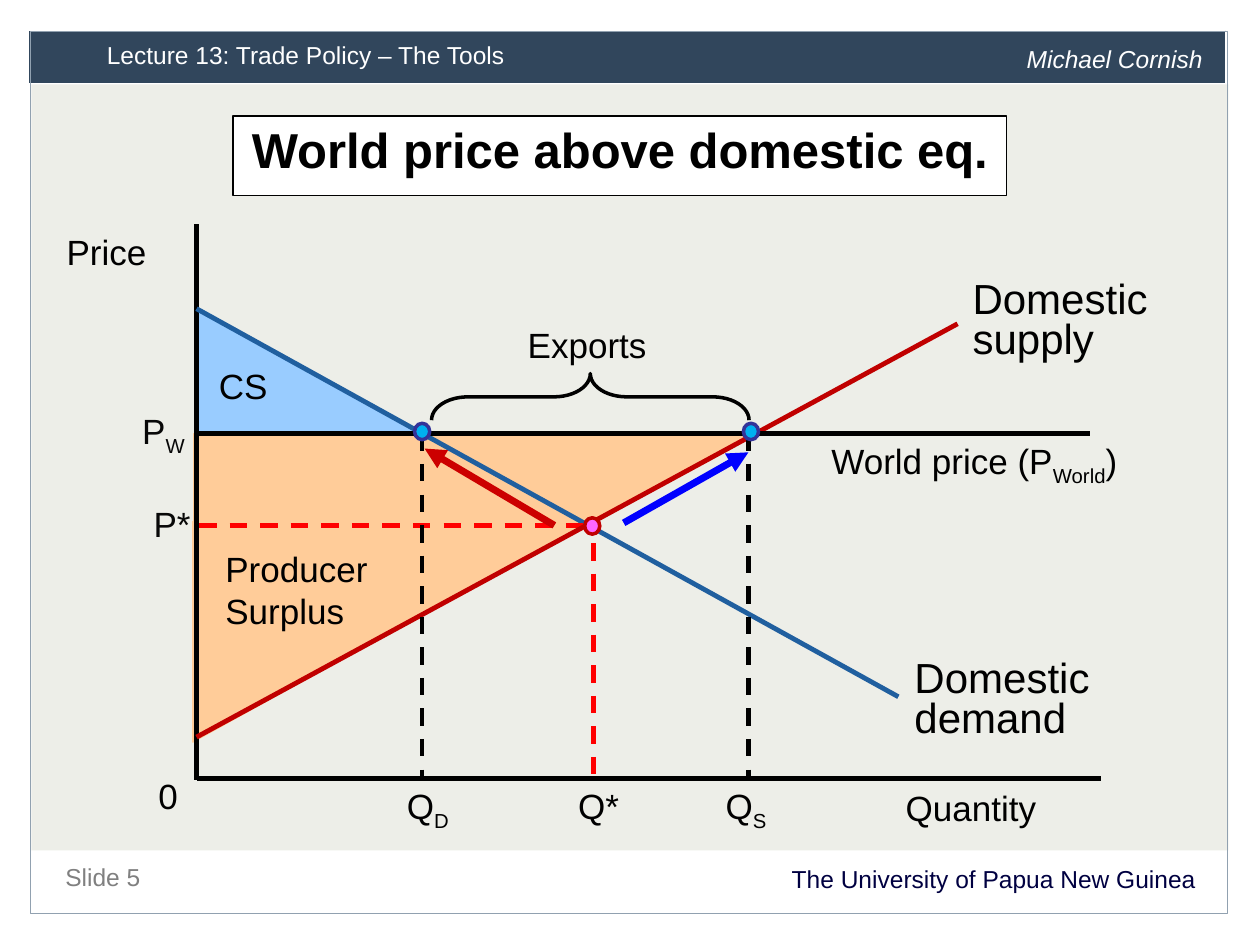
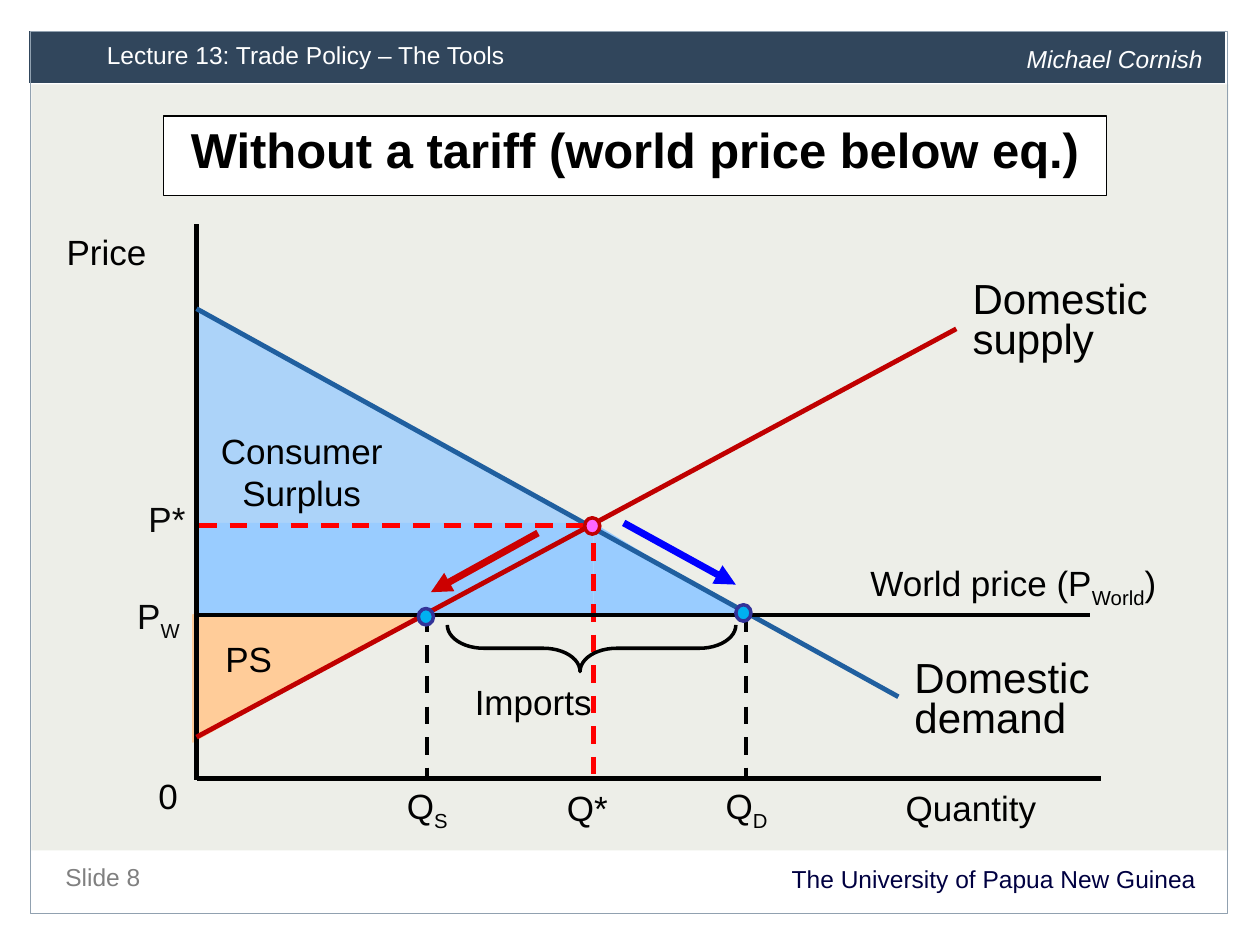
from lxml import etree
from pptx import Presentation
from pptx.dml.color import RGBColor
from pptx.enum.dml import MSO_LINE
from pptx.enum.shapes import MSO_CONNECTOR, MSO_SHAPE
from pptx.enum.text import MSO_ANCHOR, MSO_AUTO_SIZE, PP_ALIGN
from pptx.oxml.ns import qn
from pptx.util import Pt

PX = 9144  # EMU in one px, 100 px to the inch
FONT = "Arial"
TITLE_ONLY = 5

RECT, OVAL = MSO_SHAPE.RECTANGLE, MSO_SHAPE.OVAL
WEDGE, BRACE = MSO_SHAPE.RIGHT_TRIANGLE, MSO_SHAPE.LEFT_BRACE
STRAIGHT, DASH = MSO_CONNECTOR.STRAIGHT, MSO_LINE.DASH
LEFT, CENTER, RIGHT = PP_ALIGN.LEFT, PP_ALIGN.CENTER, PP_ALIGN.RIGHT
MIDDLE, NO_FIT = MSO_ANCHOR.MIDDLE, MSO_AUTO_SIZE.NONE

BLACK = RGBColor(0x00, 0x00, 0x00)
INK = RGBColor(0x08, 0x08, 0x08)
WHITE = RGBColor(0xFF, 0xFF, 0xFF)
GREY = RGBColor(0x80, 0x80, 0x80)
PANEL = RGBColor(0xED, 0xEE, 0xE8)
BAND = RGBColor(0x31, 0x46, 0x5C)
FRAME = RGBColor(0x91, 0xA1, 0xB0)
NAVY = RGBColor(0x00, 0x00, 0x41)
PEACH = RGBColor(0xFF, 0xCC, 0x99)
SKY = RGBColor(0x99, 0xCC, 0xFF)
DEMAND = RGBColor(0x20, 0x5F, 0x9F)
SUPPLY = RGBColor(0xC0, 0x00, 0x00)
RED = RGBColor(0xFF, 0x00, 0x00)
BLUE = RGBColor(0x00, 0x00, 0xFF)
CRIMSON = RGBColor(0xCC, 0x00, 0x00)
PINK = RGBColor(0xFF, 0x66, 0xFF)
CYAN = RGBColor(0x00, 0xB0, 0xF0)
INDIGO = RGBColor(0x33, 0x33, 0x99)

# Chart places shared by both slides
AXIS_X, AXIS_Y = 156, 618
STAR_X, STAR_Y = 471, 417


def scale(*sizes):
    return [size * PX for size in sizes]


class Pen:
    def __init__(self):
        self.deck = Presentation()
        self.deck.slide_width, self.deck.slide_height = scale(1000, 750)
        self.slide = None

    def start(self, number):
        """Add a slide with the bands, frame and footers."""
        layout = self.deck.slide_layouts[TITLE_ONLY]
        self.slide = self.deck.slides.add_slide(layout)
        self.shape(RECT, 25, 67, 950, 608, PANEL)
        self.shape(RECT, 23, 24, 950, 42, BAND, WHITE, 0.5)
        self.text("The University of Papua New Guinea", 42, 683, 917, 32,
                  14, NAVY, RIGHT, Pt(15))
        self.text(f"Slide {number}", 42, 675, 433, 34, 14, GREY,
                  space=Pt(20))
        self.text("Lecture 13: Trade Policy – The Tools", 75, 25, 613, 37,
                  14, WHITE, space=Pt(18))
        self.shape(RECT, 24, 25, 950, 700, line=FRAME)
        self.text("Michael Cornish", 805, 28, 164, 37, 14, WHITE,
                  space=Pt(18), italic=True)

    def title(self, text, x, width):
        box = self.slide.shapes.title
        box.left, box.top, box.width, box.height = scale(x, 92, width, 63)
        box.fill.solid()
        box.fill.fore_color.rgb = WHITE
        box.line.color.rgb = BLACK
        box.line.width = Pt(0.75)
        frame = box.text_frame
        frame.text = text
        frame.auto_size = NO_FIT
        frame.vertical_anchor = MIDDLE
        para = frame.paragraphs[0]
        self.style(para, 28, BLACK, CENTER, Pt(26))
        para.font.bold = True
        # Bring the title in front of the background panel
        self.slide.shapes._spTree.append(box._element)

    def style(self, para, size, color, align, space):
        para.alignment = align
        if space:
            para.line_spacing = space
        para.font.name = FONT
        para.font.size = Pt(size)
        para.font.color.rgb = color

    def text(self, words, x, y, width, height, size=20, color=BLACK,
             align=LEFT, space=None, italic=False):
        """Add text; every second part between underscores is a subscript."""
        box = self.slide.shapes.add_textbox(*scale(x, y, width, height))
        box.text_frame.word_wrap = True
        para = box.text_frame.paragraphs[0]
        for index, part in enumerate(words.split("_")):
            if part:
                run = para.add_run()
                run.text = part
                if index % 2:
                    run._r.get_or_add_rPr().set("baseline", "-25000")
        self.style(para, size, color, align, space)
        if italic:
            para.font.italic = True

    def shape(self, kind, x, y, width, height, fill=None, line=None,
              weight=0.75):
        item = self.slide.shapes.add_shape(kind, *scale(x, y, width, height))
        item.shadow.inherit = False
        if fill is None:
            item.fill.background()
        else:
            item.fill.solid()
            item.fill.fore_color.rgb = fill
        if line is None:
            item.line.fill.background()
        else:
            item.line.color.rgb = line
            item.line.width = Pt(weight)
        return item

    def wedge(self, x, y, width, height, fill, line=None, flip=False,
              alpha=None):
        item = self.shape(WEDGE, x, y, width, height, fill, line)
        if flip:
            item._element.spPr.find(qn("a:xfrm")).set("flipV", "1")
        if alpha:
            tint = item._element.spPr.find(qn("a:solidFill"))[0]
            etree.SubElement(tint, qn("a:alpha")).set("val", str(alpha * 1000))

    def dot(self, x, y, fill=CYAN, line=INDIGO):
        self.shape(OVAL, x, y, 12, 13, fill, line, 2)

    def brace(self, x, y, length, turn, tip):
        item = self.shape(BRACE, x, y, 37, length, line=BLACK, weight=2)
        item.rotation = turn
        item.adjustments[0] = 0.78
        item.adjustments[1] = tip

    def line(self, start, end, color=BLACK, weight=2.5, dash=False,
             arrow=False):
        item = self.slide.shapes.add_connector(
            STRAIGHT, *scale(*start, *end))
        item.line.color.rgb = color
        item.line.width = Pt(weight)
        if dash:
            item.line.dash_style = DASH
        if arrow:
            tail = etree.SubElement(item.line._get_or_add_ln(),
                                    qn("a:tailEnd"))
            tail.set("type", "triangle")
        etree.SubElement(item._element.spPr, qn("a:effectLst"))

    def market(self, supply_end):
        """Draw the axes, both curves and the domestic equilibrium."""
        self.line((AXIS_X, 178), (AXIS_X, AXIS_Y + 1))
        self.line((AXIS_X, AXIS_Y), (874, AXIS_Y))
        self.text("Price", 43, 178, 177, 49)
        self.text("Quantity", 709, 626, 160, 42, space=0.8)
        self.text("0", 116, 610, 40, 45)
        self.line((AXIS_X, 245), (713, 553), DEMAND, 2.75)
        self.text("Domestic demand", 716, 520, 187, 84, 24, space=0.8)
        self.line((158, STAR_Y), (472, STAR_Y), RED, dash=True)
        self.line((STAR_X, 431), (STAR_X, AXIS_Y), RED, dash=True)
        self.line((AXIS_X, 585), supply_end, SUPPLY, 2.75)
        self.text("Domestic supply", 762, 219, 178, 84, 24, space=0.8)

    def trade(self, price, left, right, names):
        """Draw the world price line and the two traded quantities."""
        self.line((AXIS_X, price), (865, price))
        self.dot(464, 411, PINK, SUPPLY)
        for x in (left, right):
            self.line((x, price), (x, AXIS_Y), dash=True)
        for x, name in zip((313, 566), names):
            self.text(f"Q_{name}_", x, 618, 62, 46)

    def shift(self, *arrows):
        for color, (start, end) in zip((BLUE, CRIMSON), arrows):
            self.line(start, end, color, 4, arrow=True)


def exports(pen):
    price = 344
    pen.start(5)
    pen.shape(RECT, 154, price, 312, 71, PEACH, PEACH)
    pen.wedge(467, price, 135, 71, PEACH, PEACH, flip=True)
    pen.wedge(153, 414, 315, 175, PEACH, PEACH, flip=True)
    pen.wedge(AXIS_X, 245, 179, 99, SKY)
    pen.market((760, 257))
    pen.trade(price, 335, 594, "DS")
    pen.text("Q*", 449, 618, 58, 49)
    pen.text("P*", 112, 394, 81, 49, color=INK)
    pen.text("P_W_", 103, 320, 65, 49, color=INK)
    pen.text("World price (P_World_)", 650, price, 283, 49)
    pen.brace(450, 189, 252, 90, 0.5)
    pen.text("Exports", 409, 252, 126, 44)
    pen.shift(((495, 415), (594, 359)), ((440, 417), (337, 356)))
    pen.title("World price above domestic eq.", 185, 614)
    pen.text("CS", 146, 284, 94, 44, align=CENTER)
    pen.text("Producer Surplus", 169, 430, 220, 77)
    pen.dot(329, 336)
    pen.dot(590, 336)


def imports(pen):
    price = 488
    pen.start(8)
    pen.shape(RECT, AXIS_X, 415, 315, 73, SKY)
    pen.wedge(STAR_X, 415, 121, 73, SKY)
    pen.wedge(153, price, 180, 101, PEACH, PEACH, flip=True)
    pen.wedge(AXIS_X, 245, 307, 170, SKY, alpha=77)
    pen.market((759, 261))
    pen.trade(price, 339, 592, "SD")
    pen.text("Q*", 440, 619, 58, 49)
    pen.text("P*", 108, 390, 81, 49, color=INK)
    pen.text("P_W_", 99, 467, 65, 49, color=INK)
    pen.text("World price (P_World_)", 681, 441, 283, 49)
    pen.brace(451, 400, 229, 270, 0.46)
    pen.text("Imports", 367, 535, 126, 49)
    pen.shift(((495, 415), (584, 464)), ((427, 423), (342, 470)))
    pen.title("Without a tariff (world price below eq.)", 130, 748)
    pen.text("Consumer Surplus", 161, 336, 157, 77, align=CENTER)
    pen.text("PS", 169, 501, 63, 44)
    pen.dot(332, 483)
    pen.dot(584, 480)


def main():
    pen = Pen()
    exports(pen)
    imports(pen)
    pen.deck.save("out.pptx")


if __name__ == "__main__":
    main()
